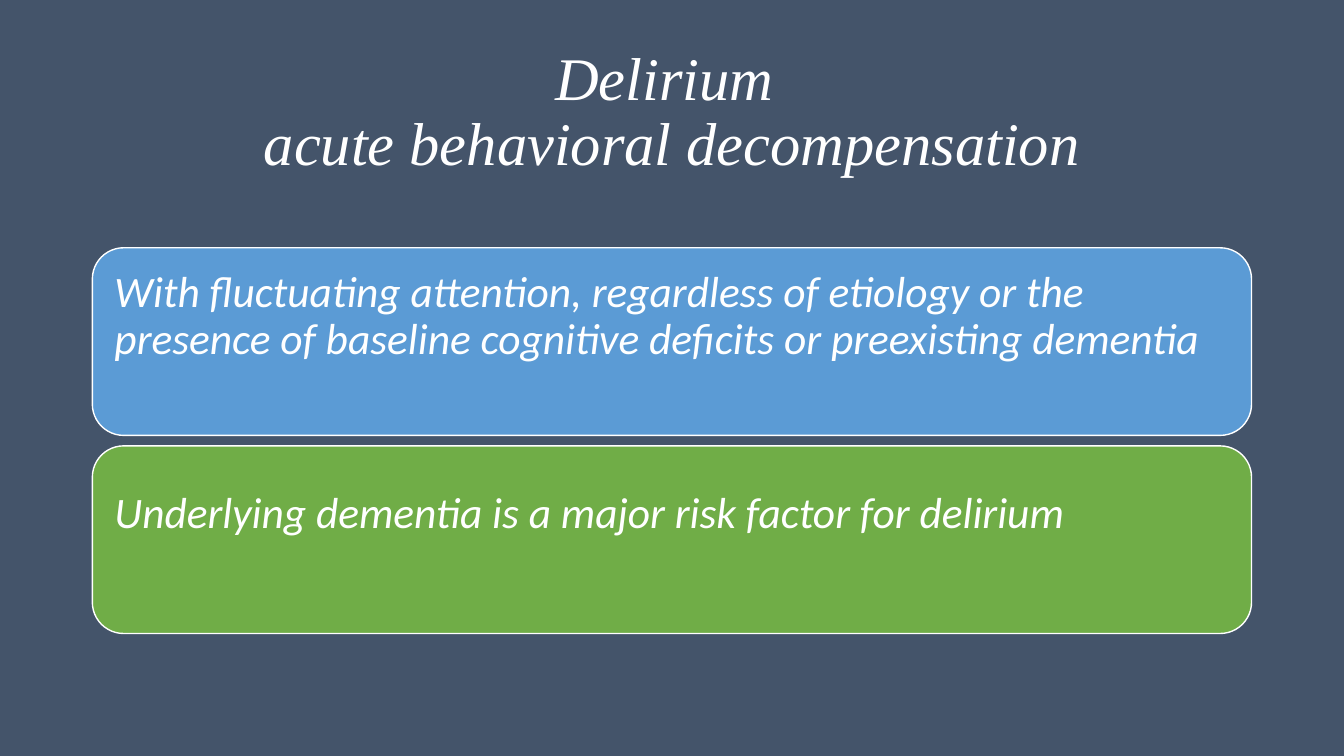
from pptx import Presentation
from pptx.dml.color import RGBColor
from pptx.enum.shapes import MSO_SHAPE
from pptx.enum.text import MSO_ANCHOR, MSO_AUTO_SIZE, PP_ALIGN
from pptx.util import Pt

ROUNDED = MSO_SHAPE.ROUNDED_RECTANGLE
MIDDLE = MSO_ANCHOR.MIDDLE
NO_AUTOFIT = MSO_AUTO_SIZE.NONE
CENTER, LEFT = PP_ALIGN.CENTER, PP_ALIGN.LEFT

SLATE = RGBColor(0x44, 0x54, 0x6A)
BLUE = RGBColor(0x5B, 0x9B, 0xD5)
GREEN = RGBColor(0x70, 0xAD, 0x47)
WHITE = RGBColor(0xFF, 0xFF, 0xFF)

TITLE_LINES = ["Delirium ", "acute behavioral decompensation"]
STATEMENTS = [
    ("With fluctuating attention, regardless of etiology or the presence of "
     "baseline cognitive deficits or preexisting dementia", BLUE),
    ("Underlying dementia is a major risk factor for delirium", GREEN),
]


def write_lines(frame, lines, font_name, size, alignment):
    """Write white italic lines into one paragraph of the frame."""
    frame.word_wrap = True
    frame.auto_size = NO_AUTOFIT
    frame.vertical_anchor = MIDDLE
    paragraph = frame.paragraphs[0]
    paragraph.alignment = alignment
    paragraph.line_spacing = 0.9
    for index, line in enumerate(lines):
        if index:
            paragraph.add_line_break()
        run = paragraph.add_run()
        run.text = line
        run.font.name = font_name
        run.font.size = Pt(size)
        run.font.italic = True
        run.font.color.rgb = WHITE


def place_title(slide, left, top, width, height):
    """Place and format the two-line title in its box."""
    title = slide.shapes.title
    title.left, title.top = Pt(left), Pt(top)
    title.width, title.height = Pt(width), Pt(height)
    write_lines(title.text_frame, TITLE_LINES, "Times New Roman", 43.2, CENTER)


def add_statements(slide, left, top, width, height, gap=7.5):
    """Stack the statement cards evenly in the given box."""
    card_height = (height - gap * (len(STATEMENTS) - 1)) / len(STATEMENTS)
    for index, (statement, color) in enumerate(STATEMENTS):
        card_top = top + index * (card_height + gap)
        card = slide.shapes.add_shape(
            ROUNDED, Pt(left), Pt(card_top), Pt(width), Pt(card_height))
        card.shadow.inherit = False
        card.fill.solid()
        card.fill.fore_color.rgb = color
        card.line.color.rgb = WHITE
        card.line.width = Pt(1)
        frame = card.text_frame
        frame.margin_left = frame.margin_right = frame.margin_top = Pt(9.3)
        frame.margin_bottom = Pt(45)
        write_lines(frame, [statement], "Calibri", 31, LEFT)


def main():
    """Build and save the delirium slide."""
    deck = Presentation()
    deck.slide_width, deck.slide_height = Pt(960), Pt(540)
    slide = deck.slides.add_slide(deck.slide_layouts[5])
    slide.background.fill.solid()
    slide.background.fill.fore_color.rgb = SLATE
    place_title(slide, 66, 28.75, 828, 104.4)
    add_statements(slide, 66, 177, 828, 275.5)
    deck.save("out.pptx")


if __name__ == "__main__":
    main()
